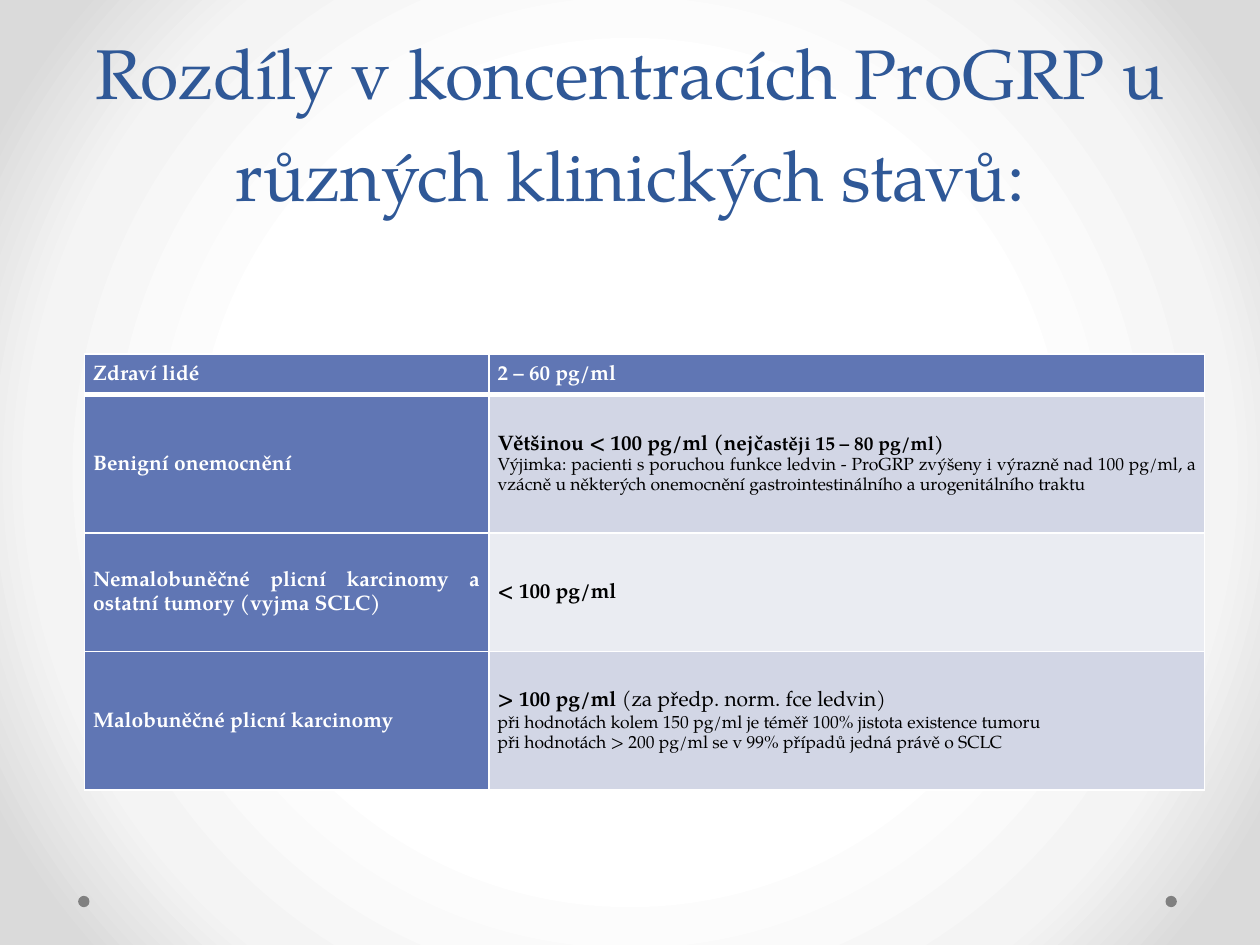
from dataclasses import dataclass

from lxml import etree
from pptx import Presentation
from pptx.dml.color import RGBColor
from pptx.enum import shapes, text
from pptx.oxml import parse_xml
from pptx.oxml.ns import nsdecls, qn
from pptx import util as u

WIDTH, HEIGHT = u.Inches(10), u.Inches(7.5)
FONT = "TeX Gyre Pagella"
WHITE, BLACK, NAVY, GREY = "FFFFFF", "000000", "2F5897", "808080"
LABEL_FILL, BAND_FILLS = "6076B4", ("EAECF2", "D2D6E5")
COLUMN_WIDTHS = (3.21, 5.68)


@dataclass(frozen=True)
class Run:
    words: str
    size: float = 12
    bold: bool = True


@dataclass(frozen=True)
class Finding:
    condition: str
    height: float
    levels: tuple[tuple[Run, ...], ...]


FINDINGS = (
    Finding("Zdraví lidé", 0.32, ((Run("2 – 60 pg/ml"),),)),
    Finding("Benigní onemocnění", 1.1, (
        (Run("Většinou < 100 pg/ml (nejč"), Run("astěji 15 – 80 pg/ml)", 11)),
        (Run("Výjimka: pacienti s poruchou funkce ledvin - ProGRP zvýšeny "
             "i výrazně nad 100 pg/ml, a vzácně u některých onemocnění "
             "gastrointestinálního a urogenitálního traktu", 10, False),),
    )),
    Finding("Nemalobuněčné plicní karcinomy a ostatní tumory (vyjma SCLC)", 0.94,
            ((Run("< 100 pg/ml"),),)),
    Finding("Malobuněčné plicní karcinomy", 1.1, (
        (Run("> 100 pg/ml "), Run("(za předp. norm. fce ledvin)", 12, False)),
        (Run("při hodnotách kolem 150 pg/ml je téměř 100% jistota existence tumoru",
             10, False),),
        (Run("při hodnotách > 200 pg/ml se v 99% případů jedná právě o SCLC",
             10, False),),
    )),
)


def paint(fill, color: str) -> None:
    fill.solid()
    fill.fore_color.rgb = RGBColor.from_string(color)


def add_run(paragraph, run: Run, color: str) -> None:
    piece = paragraph.add_run()
    piece.text = run.words
    piece.font.name = FONT
    piece.font.size = u.Pt(run.size)
    piece.font.bold = run.bold
    piece.font.color.rgb = RGBColor.from_string(color)


def set_background(slide) -> None:
    stops = "".join(
        f'<a:gs pos="{share * 1000}"><a:srgbClr val="{color}"/></a:gs>'
        for share, color in ((50, WHITE), (76, "F4F4F4"), (92, "DADADA")))
    center = " ".join(f'{side}="50000"' for side in "ltrb")
    slide.element.cSld.insert(0, parse_xml(
        f'<p:bg {nsdecls("p", "a")}><p:bgPr><a:gradFill rotWithShape="1">'
        f'<a:gsLst>{stops}</a:gsLst><a:path path="circle">'
        f'<a:fillToRect {center}/></a:path></a:gradFill>'
        '<a:effectLst/></p:bgPr></p:bg>'))


def add_dot(slide, left_share: float) -> None:
    side = u.Inches(0.09)
    dot = slide.shapes.add_shape(
        shapes.MSO_SHAPE.OVAL, int(WIDTH * left_share), int(HEIGHT * 0.948), side, side)
    dot.shadow.inherit = False
    paint(dot.fill, GREY)
    dot.line.fill.background()


def set_title(slide) -> None:
    title = slide.shapes.title
    title.left, title.top = int(WIDTH * 0.05), 0
    title.width, title.height = int(WIDTH * 0.9), u.Inches(2.57)
    frame = title.text_frame
    frame.word_wrap = True
    frame.auto_size = text.MSO_AUTO_SIZE.NONE
    frame.vertical_anchor = text.MSO_ANCHOR.BOTTOM
    frame.margin_bottom = u.Inches(0.86)
    heading = frame.paragraphs[0]
    heading.alignment = text.PP_ALIGN.CENTER
    heading.line_spacing = u.Pt(58)
    add_run(heading, Run("Rozdíly v koncentracích ProGRP u různých klinických stavů:",
                         40, False), NAVY)


def set_borders(cell, top: float, bottom: float) -> None:
    properties = cell._tc.get_or_add_tcPr()
    edges = (("lnL", 1), ("lnR", 1), ("lnT", top), ("lnB", bottom))
    for place, (edge, points) in enumerate(edges):
        line = etree.Element(qn(f"a:{edge}"), w=str(u.Pt(points)))
        fill = etree.SubElement(line, qn("a:solidFill"))
        etree.SubElement(fill, qn("a:srgbClr"), val=WHITE)
        properties.insert(place, line)


def fill_cell(cell, levels: tuple[tuple[Run, ...], ...], fill: str, ink: str) -> None:
    paint(cell.fill, fill)
    cell.vertical_anchor = text.MSO_ANCHOR.MIDDLE
    cell.margin_left = cell.margin_right = u.Inches(0.07)
    cell.margin_top = cell.margin_bottom = 0
    for index, runs in enumerate(levels):
        frame = cell.text_frame
        paragraph = frame.add_paragraph() if index else frame.paragraphs[0]
        paragraph.alignment = text.PP_ALIGN.JUSTIFY
        paragraph.line_spacing = 1.15
        for run in runs:
            add_run(paragraph, run, ink)


def add_findings(slide) -> None:
    table = slide.shapes.add_table(
        len(FINDINGS), len(COLUMN_WIDTHS), u.Inches(0.67), u.Inches(2.81),
        u.Inches(sum(COLUMN_WIDTHS)),
        u.Inches(sum(finding.height for finding in FINDINGS))).table
    for column, width in zip(table.columns, COLUMN_WIDTHS):
        column.width = u.Inches(width)
    for index, finding in enumerate(FINDINGS):
        table.rows[index].height = u.Inches(finding.height)
        condition, level = table.rows[index].cells
        fill_cell(condition, ((Run(finding.condition),),), LABEL_FILL, WHITE)
        fill_cell(level, finding.levels,
                  BAND_FILLS[index % 2] if index else LABEL_FILL,
                  BLACK if index else WHITE)
        for cell in (condition, level):
            set_borders(cell, 3 if index == 1 else 1, 3 if index == 0 else 1)


def main() -> None:
    deck = Presentation()
    deck.slide_width, deck.slide_height = WIDTH, HEIGHT
    slide = deck.slides.add_slide(deck.slide_layouts[5])
    set_background(slide)
    for left_share in (0.925, 0.062):
        add_dot(slide, left_share)
    set_title(slide)
    add_findings(slide)
    deck.save("out.pptx")


if __name__ == "__main__":
    main()
